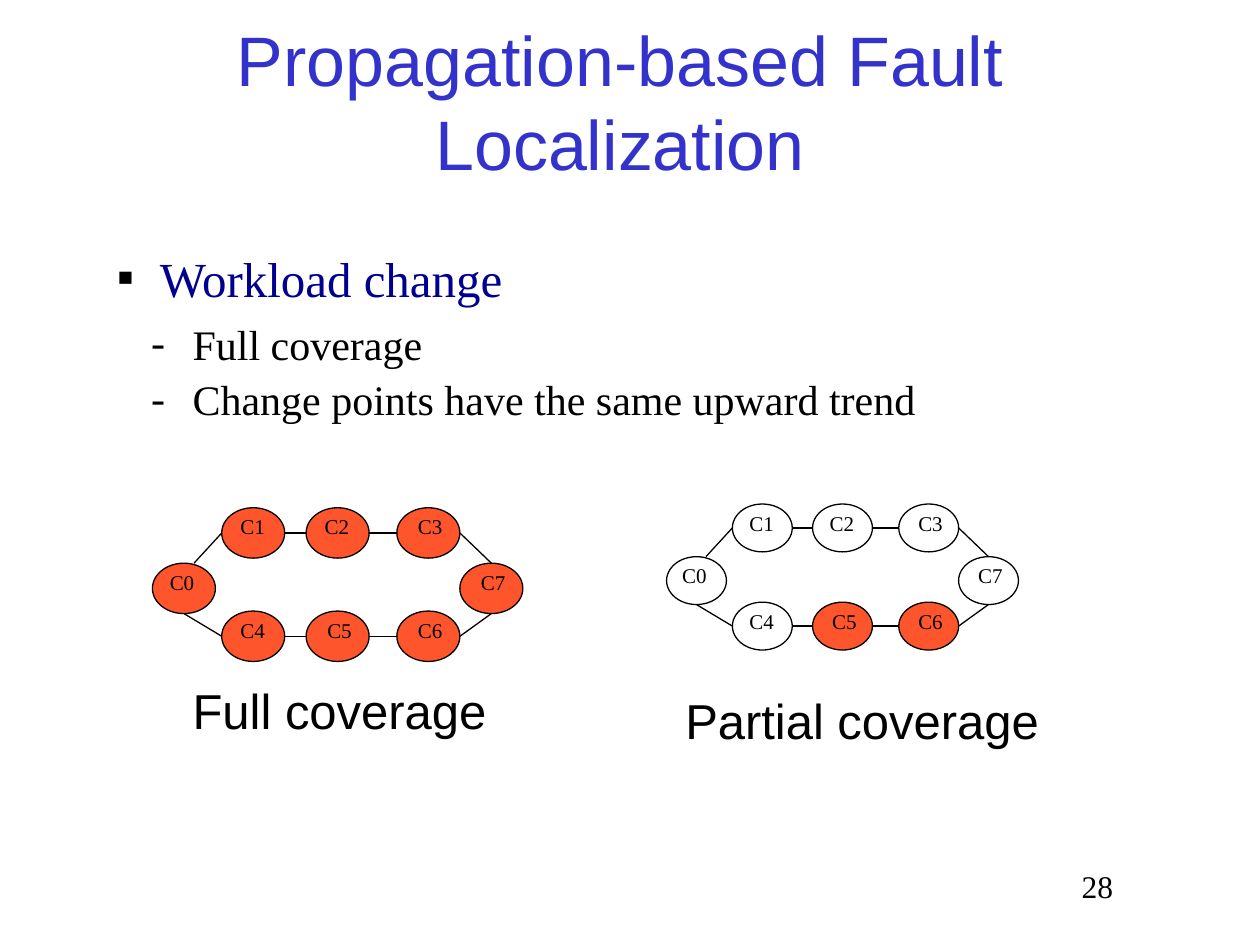
from lxml import etree
from pptx import Presentation
from pptx.dml.color import RGBColor
from pptx.enum.shapes import MSO_CONNECTOR as Connector, MSO_SHAPE as Shape
from pptx.enum.text import MSO_ANCHOR as Anchor, PP_ALIGN as Align
from pptx.oxml.ns import qn
from pptx.util import Inches, Pt

SANS, SERIF = "Arial", "Times New Roman"
BLACK, BLUE, NAVY, ORANGE = "000000", "3333CC", "000090", "FF552D"
NODE_WIDTH, NODE_HEIGHT = 0.5, 0.4
LABEL_WIDTH, LABEL_HEIGHT = 0.53, 0.3

COLUMNS = [0, 0.55, 1.22, 1.94, 2.44]
ROWS = [0, 0.44, 0.82]
NODES = {
    "C0": (0, 1, -0.03),
    "C1": (1, 0, -0.02),
    "C2": (2, 0, -0.02),
    "C3": (3, 0, 0),
    "C4": (1, 2, -0.02),
    "C5": (2, 2, 0),
    "C6": (3, 2, 0),
    "C7": (4, 1, 0),
}
LEFT, RIGHT = (0, 0.5), (1, 0.5)
TOP, BOTTOM, TOP_RIGHT = (0.5, 0), (0.5, 1), (0.66, 0)
EDGES = [
    ("C0", TOP_RIGHT, "C1", LEFT),
    ("C0", BOTTOM, "C4", LEFT),
    ("C1", RIGHT, "C2", LEFT),
    ("C2", RIGHT, "C3", LEFT),
    ("C3", RIGHT, "C7", TOP),
    ("C4", RIGHT, "C5", LEFT),
    ("C5", RIGHT, "C6", LEFT),
    ("C6", RIGHT, "C7", BOTTOM),
]


def color(value):
    return RGBColor.from_string(value)


def style(paragraph, text, font, size, ink=BLACK, align=Align.LEFT, before=0):
    paragraph.text = text
    paragraph.font.name = font
    paragraph.font.size = Pt(size)
    paragraph.font.color.rgb = color(ink)
    paragraph.alignment = align
    paragraph.space_before = Pt(before)


def add_frame(shapes, left, top, width, height):
    box = shapes.add_textbox(*map(Inches, (left, top, width, height)))
    box.text_frame.word_wrap = True
    return box.text_frame


def add_text(shapes, area, *args, anchor=Anchor.TOP, **options):
    frame = add_frame(shapes, *area)
    frame.vertical_anchor = anchor
    style(frame.paragraphs[0], *args, **options)


def set_bullet(paragraph, mark, margin, hanging):
    properties = paragraph._p.get_or_add_pPr()
    properties.set("marL", str(Inches(margin)))
    properties.set("indent", str(-Inches(hanging)))
    bullet_color = etree.SubElement(properties, qn("a:buClr"))
    etree.SubElement(bullet_color, qn("a:srgbClr"), val=BLACK)
    etree.SubElement(properties, qn("a:buFont"), typeface=SERIF)
    etree.SubElement(properties, qn("a:buChar"), char=mark)


def add_bullets(shapes):
    frame = add_frame(shapes, 0.83, 1.92, 8.58, 1.45)
    items = [
        ("Workload change", 28, NAVY, 0, 3, "▪", 0.34, 0.34),
        ("Full coverage", 24, BLACK, 1, 6.5, "-", 0.6, 0.33),
        ("Change points have the same upward trend", 24, BLACK, 1, 3, "-", 0.6, 0.33),
    ]
    for index, (text, size, ink, level, before, *bullet) in enumerate(items):
        paragraph = frame.add_paragraph() if index else frame.paragraphs[0]
        style(paragraph, text, SERIF, size, ink, before=before)
        paragraph.level = level
        set_bullet(paragraph, *bullet)


def add_node(shapes, left, top, scale, fill):
    area = (left, top, NODE_WIDTH * scale, NODE_HEIGHT * scale)
    node = shapes.add_shape(Shape.OVAL, *map(Inches, area))
    node.shadow.inherit = False
    node.line.color.rgb = color(BLACK)
    node.line.width = Pt(0.75)
    if fill:
        node.fill.solid()
        node.fill.fore_color.rgb = color(fill)
    else:
        node.fill.background()


def add_edge(shapes, start, end):
    edge = shapes.add_connector(Connector.STRAIGHT, *map(Inches, start + end))
    edge.line.color.rgb = color(BLACK)
    edge.line.width = Pt(0.75)
    etree.SubElement(edge._element.spPr, qn("a:effectLst"))


def add_graph(slide, left, top, scale, faulty):
    shapes = slide.shapes.add_group_shape().shapes
    places = {
        name: (left + COLUMNS[column] * scale, top + ROWS[row] * scale)
        for name, (column, row, shift) in NODES.items()
    }

    def point(name, side):
        x, y = places[name]
        return (x + side[0] * NODE_WIDTH * scale, y + side[1] * NODE_HEIGHT * scale)

    for name, place in places.items():
        add_node(shapes, *place, scale, ORANGE if name in faulty else None)
    for source, source_side, target, target_side in EDGES:
        add_edge(shapes, point(source, source_side), point(target, target_side))
    for name, (x, y) in places.items():
        area = (x + NODES[name][2], y, LABEL_WIDTH * scale, LABEL_HEIGHT)
        add_text(shapes, area, name, SERIF, 12, align=Align.CENTER)


def main():
    presentation = Presentation()
    presentation.slide_width = Inches(10)
    presentation.slide_height = Inches(7.5)
    slide = presentation.slides.add_slide(presentation.slide_layouts[6])
    shapes = slide.shapes

    add_text(shapes, (0.67, 0.17, 8.5, 1.25), "Propagation-based Fault Localization",
             SANS, 40, BLUE, align=Align.CENTER, anchor=Anchor.MIDDLE)
    add_text(shapes, (1.43, 5.35, 3.42, 0.75), "Full coverage", SANS, 28, before=5.6)
    add_text(shapes, (5.34, 5.43, 3.25, 0.68), "Partial coverage", SANS, 28, before=5.6)
    add_graph(slide, 1.21, 4.03, 1, NODES)
    add_graph(slide, 5.29, 4, 0.95, ["C5", "C6"])
    add_bullets(shapes)
    add_text(shapes, (7.67, 6.83, 2.08, 0.5), "28", SERIF, 18, align=Align.CENTER)
    presentation.save("out.pptx")


if __name__ == "__main__":
    main()
